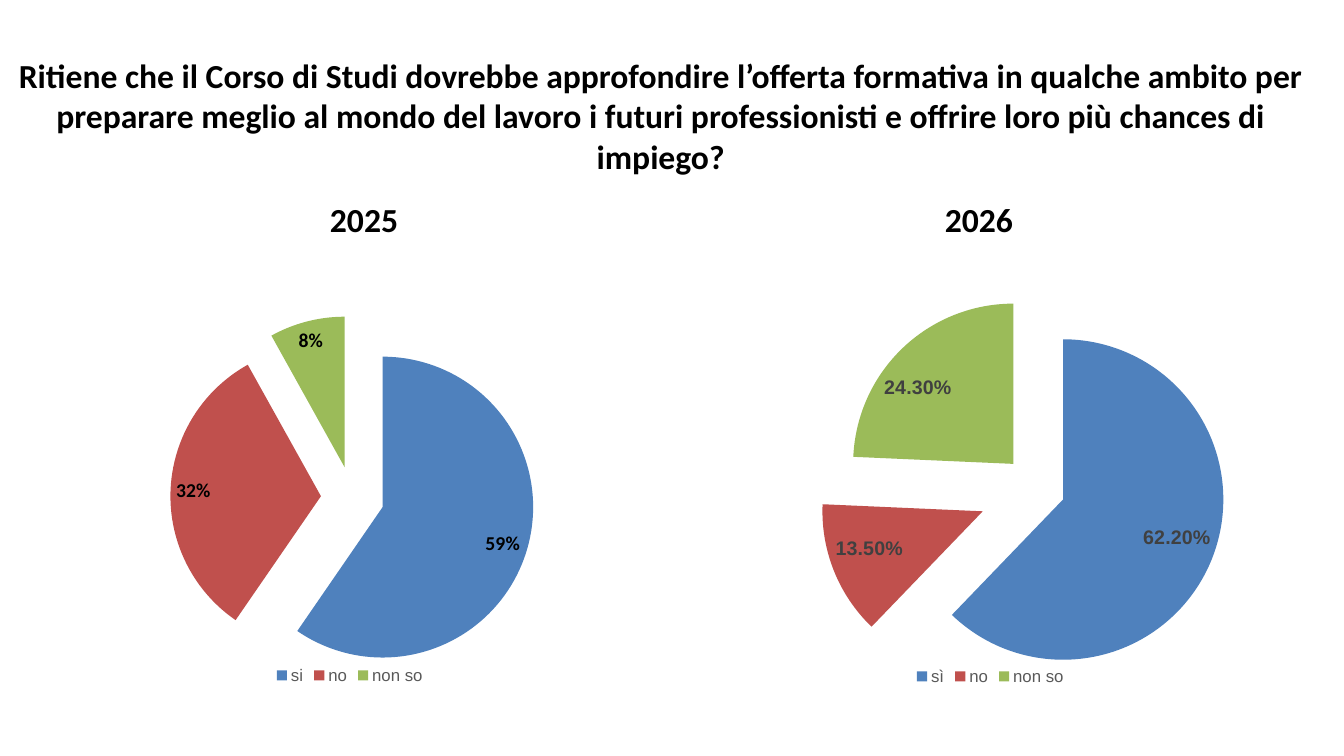
from dataclasses import dataclass

import lxml.etree
import pptx
import pptx.chart.data
import pptx.dml.color
import pptx.enum.chart
import pptx.enum.text
import pptx.oxml.ns
import pptx.util


@dataclass(frozen=True)
class Theme:
    """Colours, fonts and type sizes of the slide."""
    slices: tuple = ("4F81BD", "C0504D", "9BBB59")
    black: str = "000000"
    label_grey: str = "404040"
    legend_grey: str = "595959"
    text_font: str = "Calibri"
    chart_font: str = "Arial"
    title_size: int = 24
    label_size: int = 14
    legend_size: int = 12
    chart_size: int = 10


def chart_element(tag, value=None):
    """Return a new chart XML element with an optional value."""
    element = lxml.etree.Element(pptx.oxml.ns.qn(f"c:{tag}"))
    if value is not None:
        element.set("val", str(value))
    return element


class SurveySlide:
    """Draws survey elements on a grid of 40 columns and 30 rows."""

    def __init__(self, presentation, theme):
        """Add a comparison slide and keep the style."""
        self.theme = theme
        self.column = presentation.slide_width / 40
        self.row = presentation.slide_height / 30
        self.slide = presentation.slides.add_slide(presentation.slide_layouts[4])

    def box(self, left, top, width, height):
        """Convert grid units to lengths."""
        return (round(left * self.column), round(top * self.row),
                round(width * self.column), round(height * self.row))

    def style(self, font, name, size, color, bold=False):
        """Format a font."""
        font.name = name
        font.size = pptx.util.Pt(size)
        font.bold = bold
        font.color.rgb = pptx.dml.color.RGBColor.from_string(color)

    def heading(self, index, text, area, anchor):
        """Fill and place a title or heading placeholder."""
        shape = self.slide.placeholders[index]
        shape.left, shape.top, shape.width, shape.height = self.box(*area)
        frame = shape.text_frame
        frame.text = text
        frame.word_wrap = True
        frame.auto_size = pptx.enum.text.MSO_AUTO_SIZE.NONE
        frame.vertical_anchor = anchor
        frame.margin_left = frame.margin_right = 0
        frame.margin_top = frame.margin_bottom = 0
        paragraph = frame.paragraphs[0]
        paragraph.alignment = pptx.enum.text.PP_ALIGN.CENTER
        paragraph.space_before = pptx.util.Pt(0)
        self.style(paragraph.runs[0].font, self.theme.text_font,
                   self.theme.title_size, self.theme.black, True)

    def pie(self, area, categories, values, number_format, label_font,
            label_color, plot_area, explosion, slice_explosions=()):
        """Add an exploded pie with labels and a legend."""
        theme = self.theme
        data = pptx.chart.data.CategoryChartData(number_format=number_format)
        data.categories = categories
        data.add_series("Series 1", values)
        chart = self.slide.shapes.add_chart(
            pptx.enum.chart.XL_CHART_TYPE.PIE, *self.box(*area), data).chart
        self.style(chart.font, theme.chart_font, theme.chart_size, theme.black)
        chart.has_title = False
        chart.has_legend = True
        chart.legend.position = pptx.enum.chart.XL_LEGEND_POSITION.BOTTOM
        chart.legend.include_in_layout = False
        self.style(chart.legend.font, theme.chart_font, theme.legend_size,
                   theme.legend_grey)
        plot = chart.plots[0]
        plot.vary_by_categories = True
        series = plot.series[0]
        for index, color in enumerate(theme.slices):
            fill = series.points[index].format.fill
            fill.solid()
            fill.fore_color.rgb = pptx.dml.color.RGBColor.from_string(color)
        labels = series.data_labels
        labels.show_value = True
        labels.show_percentage = False
        labels.number_format = number_format
        labels.number_format_is_linked = False
        labels.position = pptx.enum.chart.XL_LABEL_POSITION.BEST_FIT
        self.style(labels.font, label_font, theme.label_size, label_color, True)
        self.explode(series, explosion, slice_explosions)
        self.place_plot(chart, plot_area)

    def explode(self, series, explosion, slice_explosions):
        """Pull the slices away from the centre."""
        element = series._element
        points = element.findall(pptx.oxml.ns.qn("c:dPt"))
        points[0].addprevious(chart_element("explosion", explosion))
        for point, distance in zip(points, slice_explosions):
            fill = point.find(pptx.oxml.ns.qn("c:spPr"))
            fill.addprevious(chart_element("explosion", distance))

    def place_plot(self, chart, plot_area):
        """Set the inner plot area in shares of the chart."""
        plot_element = chart._chartSpace.chart.plotArea
        for layout in plot_element.findall(pptx.oxml.ns.qn("c:layout")):
            plot_element.remove(layout)
        layout = chart_element("layout")
        manual = chart_element("manualLayout")
        layout.append(manual)
        settings = (("layoutTarget", "inner"), ("xMode", "edge"), ("yMode", "edge"),
                    *zip("xywh", plot_area))
        for tag, value in settings:
            manual.append(chart_element(tag, value))
        plot_element.insert(0, layout)

    def remove_empty_placeholders(self):
        """Remove the placeholders without text."""
        for shape in list(self.slide.placeholders):
            if not shape.text_frame.text:
                shape._element.getparent().remove(shape._element)


def main():
    """Build and save the slide."""
    presentation = pptx.Presentation()
    presentation.slide_width = pptx.util.Inches(13.33)
    presentation.slide_height = pptx.util.Inches(7.5)
    theme = Theme()
    survey = SurveySlide(presentation, theme)
    anchors = pptx.enum.text.MSO_ANCHOR
    survey.heading(
        0, "Ritiene che il Corso di Studi dovrebbe approfondire l’offerta formativa "
        "in qualche ambito per preparare meglio al mondo del lavoro i futuri "
        "professionisti e offrire loro più chances di impiego?",
        (0.54, 2.08, 38.25, 5), anchors.MIDDLE)
    for index, year, left in ((1, "2025", 2), (3, "2026", 20.3)):
        survey.heading(index, year, (left, 7.88, 17.67, 1.6), anchors.BOTTOM)
    survey.remove_empty_placeholders()
    survey.pie((2.25, 10.32, 16.32, 17), ("si", "no", "non so"), (59, 32, 8),
               '0"%"', theme.text_font, theme.black,
               (0.05, 0.13, 0.91, 0.85), 21)
    survey.pie((20.64, 9.52, 17.67, 17.84), ("sì", "no", "non so"),
               (0.622, 0.135, 0.243), "0.00%", theme.chart_font, theme.label_grey,
               (0.16, 0.17, 0.84, 0.77), 8, (17, 37, 22))
    presentation.save("out.pptx")


if __name__ == "__main__":
    main()
